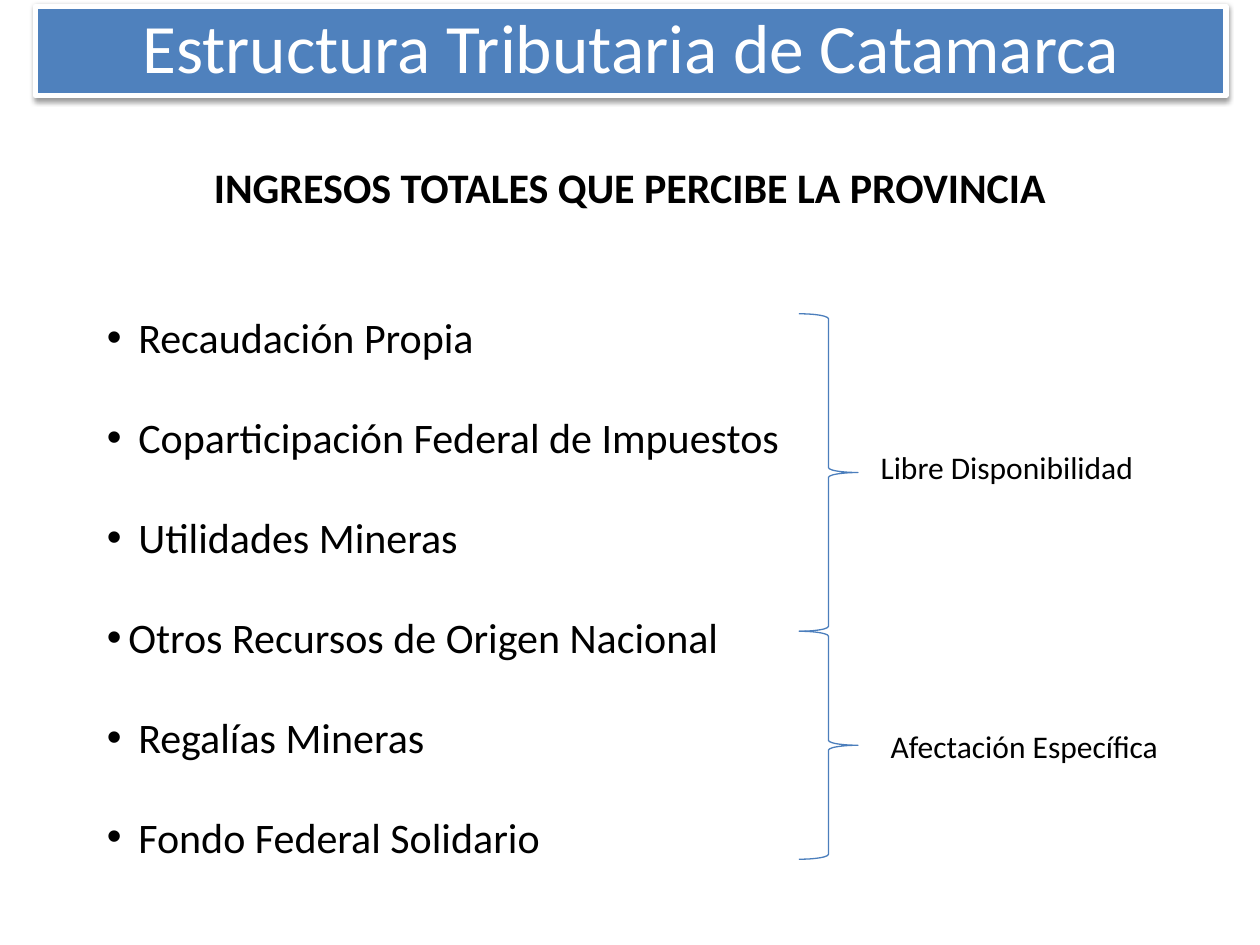
from dataclasses import dataclass

from lxml import etree
from pptx import Presentation
from pptx.dml.color import RGBColor
from pptx.enum.shapes import MSO_SHAPE
from pptx.enum.text import MSO_ANCHOR, PP_ALIGN
from pptx.oxml.ns import qn
from pptx.util import Inches, Pt

RECT = MSO_SHAPE.RECTANGLE
BRACE = MSO_SHAPE.RIGHT_BRACE
MIDDLE = MSO_ANCHOR.MIDDLE
LEFT, CENTER = PP_ALIGN.LEFT, PP_ALIGN.CENTER


@dataclass(frozen=True)
class Theme:
    font: str = "Calibri"
    ink: str = "000000"
    paper: str = "FFFFFF"
    banner: str = "4F81BD"
    brace: str = "4B7EBC"
    title_size: float = 39.6
    body_size: float = 24
    label_size: float = 18


def rgb(value):
    return RGBColor.from_string(value)


class SlideBuilder:
    def __init__(self, slide, theme):
        self.s = slide
        self.theme = theme

    def style(self, p, size, color, align=LEFT, bold=False):
        p.alignment = align
        for r in p.runs:
            r.font.name = self.theme.font
            r.font.size = Pt(size)
            r.font.bold = bold
            r.font.color.rgb = rgb(color)

    def shape(self, kind, box, line, width):
        sp = self.s.shapes.add_shape(kind, *map(Inches, box))
        sp.shadow.inherit = False
        sp.line.color.rgb = rgb(line)
        sp.line.width = Pt(width)
        return sp

    def soft_shadow(self, sp):
        effects = sp._element.spPr.find(qn("a:effectLst"))
        shadow = etree.SubElement(
            effects, qn("a:outerShdw"), blurRad=str(Pt(3.1)), dist=str(Pt(1.6)),
            dir="5400000", rotWithShape="0")
        color = etree.SubElement(shadow, qn("a:srgbClr"), val=self.theme.ink)
        etree.SubElement(color, qn("a:alpha"), val="38000")

    def banner(self, text, box):
        sp = self.shape(RECT, box, self.theme.paper, 3)
        sp.fill.solid()
        sp.fill.fore_color.rgb = rgb(self.theme.banner)
        self.soft_shadow(sp)
        tf = sp.text_frame
        tf.vertical_anchor = MIDDLE
        tf.text = text
        p = tf.paragraphs[0]
        p.line_spacing = 0.9
        self.style(p, self.theme.title_size, self.theme.paper, CENTER)

    def text_box(self, text, box):
        tf = self.s.shapes.add_textbox(*map(Inches, box)).text_frame
        tf.word_wrap = True
        tf.text = text
        return tf

    def bullet_list(self, heading, items, box):
        """Add a heading and bullets; each item is (text, hanging indent)."""
        tf = self.text_box(heading, box)
        p = tf.paragraphs[0]
        p.space_after = Pt(29)
        self.style(p, self.theme.body_size, self.theme.ink, CENTER, True)
        for text, indent in items:
            p = tf.add_paragraph()
            p.text = text
            p.space_before = Pt(28.3)
            self.style(p, self.theme.body_size, self.theme.ink)
            pPr = p._p.get_or_add_pPr()
            pPr.set("marL", str(Inches(indent)))
            pPr.set("indent", str(-Inches(indent)))
            etree.SubElement(pPr, qn("a:buFont"), typeface="Arial")
            etree.SubElement(pPr, qn("a:buChar"), char="•")

    def brace(self, box):
        self.shape(BRACE, box, self.theme.brace, 0.75).fill.background()

    def label(self, text, box):
        tf = self.text_box(text, box)
        self.style(tf.paragraphs[0], self.theme.label_size, self.theme.ink)


def main():
    prs = Presentation()
    prs.slide_width, prs.slide_height = Inches(10), Inches(7.5)
    slide = SlideBuilder(prs.slides.add_slide(prs.slide_layouts[6]), Theme())

    slide.banner("Estructura Tributaria de Catamarca", (0.28, 0.05, 9.45, 0.71))
    wide, narrow = 0.25, 0.17
    sources = [
        ("Recaudación Propia", wide),
        ("Coparticipación Federal de Impuestos", wide),
        ("Utilidades Mineras", wide),
        ("Otros Recursos de Origen Nacional", narrow),
        ("Regalías Mineras", wide),
        ("Fondo Federal Solidario", wide),
    ]
    slide.bullet_list("INGRESOS TOTALES QUE PERCIBE LA PROVINCIA", sources,
                      (0.75, 1.23, 8.5, 5.76))

    groups = [
        ("Libre Disponibilidad", 2.49, 2.52, 6.89, 3.51),
        ("Afectación Específica", 5.01, 1.81, 6.97, 5.72),
    ]
    for _, top, height, _, _ in groups:
        slide.brace((6.34, top, 0.47, height))
    for text, _, _, left, top in groups:
        slide.label(text, (left, top, 2.52, 0.4))

    prs.save("out.pptx")


if __name__ == "__main__":
    main()
